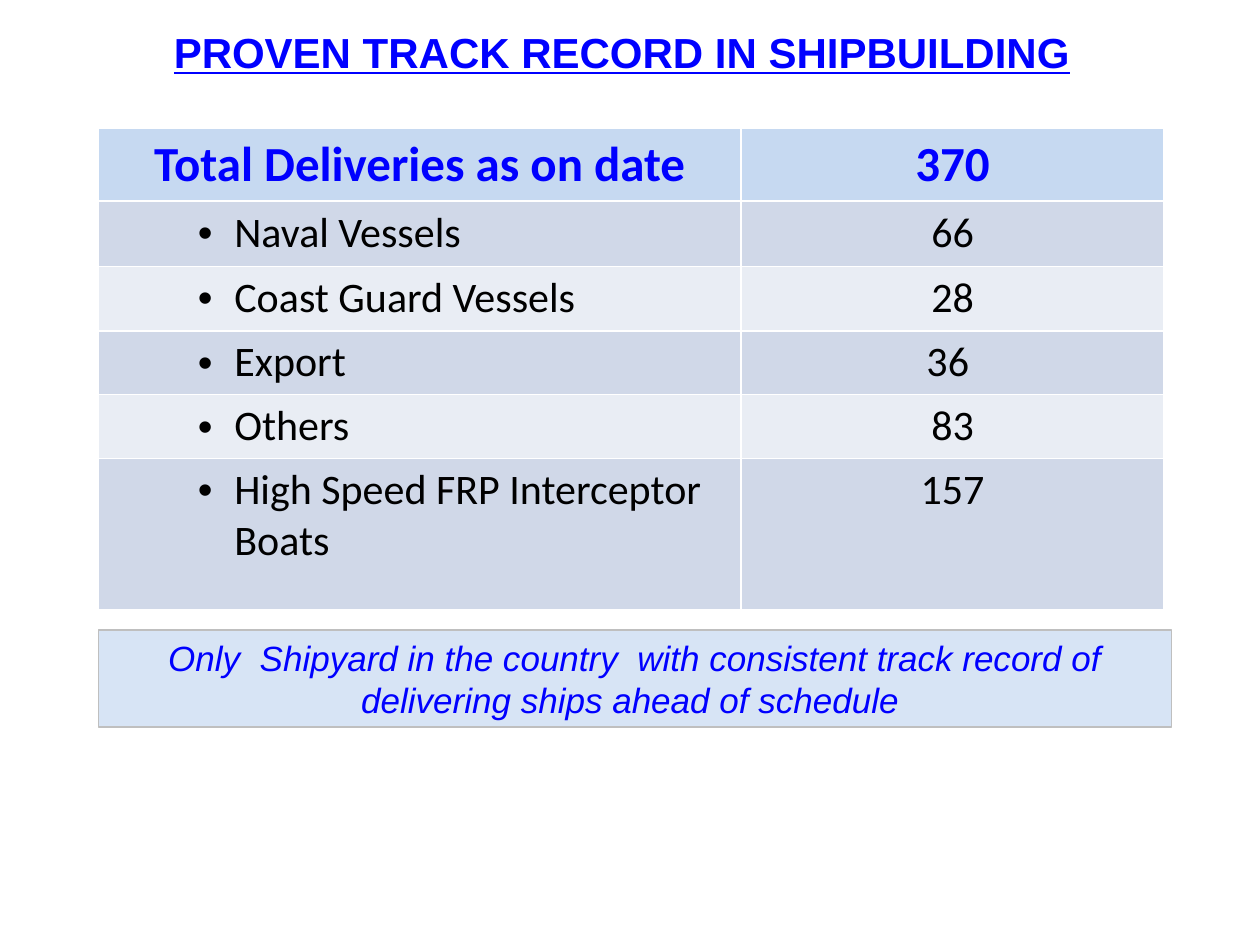
from dataclasses import dataclass

from lxml.etree import SubElement
from pptx import Presentation
from pptx.dml.color import RGBColor
from pptx.enum.shapes import MSO_SHAPE
from pptx.enum.text import MSO_ANCHOR, MSO_AUTO_SIZE, PP_ALIGN
from pptx.oxml.ns import qn
from pptx.util import Inches, Pt


@dataclass(frozen=True)
class Theme:
    blue: RGBColor = RGBColor(0x00, 0x00, 0xFF)
    black: RGBColor = RGBColor(0x00, 0x00, 0x00)
    header_fill: RGBColor = RGBColor(0xC6, 0xD9, 0xF1)
    bands: tuple = (RGBColor(0xD0, 0xD8, 0xE8), RGBColor(0xE9, 0xED, 0xF4))
    outline: RGBColor = RGBColor(0xBF, 0xBF, 0xBF)
    heading_font: str = "Arial"
    table_font: str = "Calibri"
    title_size: Pt = Pt(24)
    header_size: Pt = Pt(28)
    body_size: Pt = Pt(24)
    note_size: Pt = Pt(20)


THEME = Theme()

TITLE = "PROVEN TRACK RECORD IN SHIPBUILDING"
HEADER = ("Total Deliveries as on date", "370")
DELIVERIES = [
    ("Naval Vessels", "66"),
    ("Coast Guard Vessels", "28"),
    ("Export", "36 "),
    ("Others", "83"),
    ("High Speed FRP Interceptor Boats", "157"),
]
NOTE = ("Only  Shipyard in the country  with consistent track record of "
        "delivering ships ahead of schedule ")


def set_text(tf, text, font, size, color, align=PP_ALIGN.CENTER,
             bold=False, italic=False, underline=False):
    tf.text = text
    p = tf.paragraphs[0]
    p.alignment = align
    f = p.runs[0].font
    f.name, f.size, f.color.rgb = font, size, color
    f.bold, f.italic, f.underline = bold, italic, underline
    return p


def add_bullet(p, margin, indent):
    pPr = p._p.get_or_add_pPr()
    pPr.set("marL", str(margin))
    pPr.set("indent", str(indent))
    SubElement(pPr, qn("a:buFont"), typeface="Arial")
    SubElement(pPr, qn("a:buChar"), char="•")


def place_title(slide, left, top, width, height):
    title = slide.shapes.title
    title.left, title.top, title.width, title.height = left, top, width, height
    tf = title.text_frame
    tf.word_wrap = True
    tf.auto_size = MSO_AUTO_SIZE.NONE
    tf.vertical_anchor = MSO_ANCHOR.MIDDLE
    set_text(tf, TITLE, THEME.heading_font, THEME.title_size, THEME.blue,
             bold=True, underline=True)


def add_deliveries_table(slide, left, top, width, height):
    """Header row with the total, then one banded row per vessel type."""
    rows = [HEADER, *DELIVERIES]
    table = slide.shapes.add_table(len(rows), 2, left, top, width, height).table
    table.columns[0].width = Inches(5.1)
    table.columns[1].width = width - Inches(5.1)
    for row, h in zip(table.rows, (0.55, 0.52, 0.51, 0.5, 0.5, 1.2)):
        row.height = Inches(h)

    for i, values in enumerate(rows):
        is_header = i == 0
        for j, value in enumerate(values):
            cell = table.cell(i, j)
            cell.fill.solid()
            cell.fill.fore_color.rgb = (
                THEME.header_fill if is_header else THEME.bands[(i - 1) % 2])
            is_item = j == 0 and not is_header
            p = set_text(
                cell.text_frame, value, THEME.table_font,
                THEME.header_size if is_header else THEME.body_size,
                THEME.blue if is_header else THEME.black,
                align=PP_ALIGN.LEFT if is_item else PP_ALIGN.CENTER,
                bold=is_header)
            if is_item:
                add_bullet(p, Inches(0.98), Inches(-0.29))


def add_note(slide, left, top, width, height):
    sp = slide.shapes.add_shape(MSO_SHAPE.RECTANGLE, left, top, width, height)
    sp.shadow.inherit = False
    sp.fill.solid()
    sp.fill.fore_color.rgb = THEME.header_fill
    color = sp.fill._xPr.find(qn("a:solidFill"))[0]
    SubElement(color, qn("a:alpha"), val="69000")
    sp.line.color.rgb = THEME.outline
    sp.line.width = Pt(0.75)
    tf = sp.text_frame
    tf.word_wrap = True
    set_text(tf, NOTE, THEME.heading_font, THEME.note_size, THEME.blue,
             italic=True)


def main():
    prs = Presentation()
    prs.slide_width, prs.slide_height = Inches(10), Inches(7.5)
    slide = prs.slides.add_slide(prs.slide_layouts[5])
    place_title(slide, Inches(0.31), Inches(0.16), Inches(9.25), Inches(0.5))
    add_deliveries_table(slide, Inches(0.78), Inches(1.02),
                         Inches(8.46), Inches(3.78))
    add_note(slide, Inches(0.78), Inches(5), Inches(8.52), Inches(0.77))
    prs.save("out.pptx")


if __name__ == "__main__":
    main()
